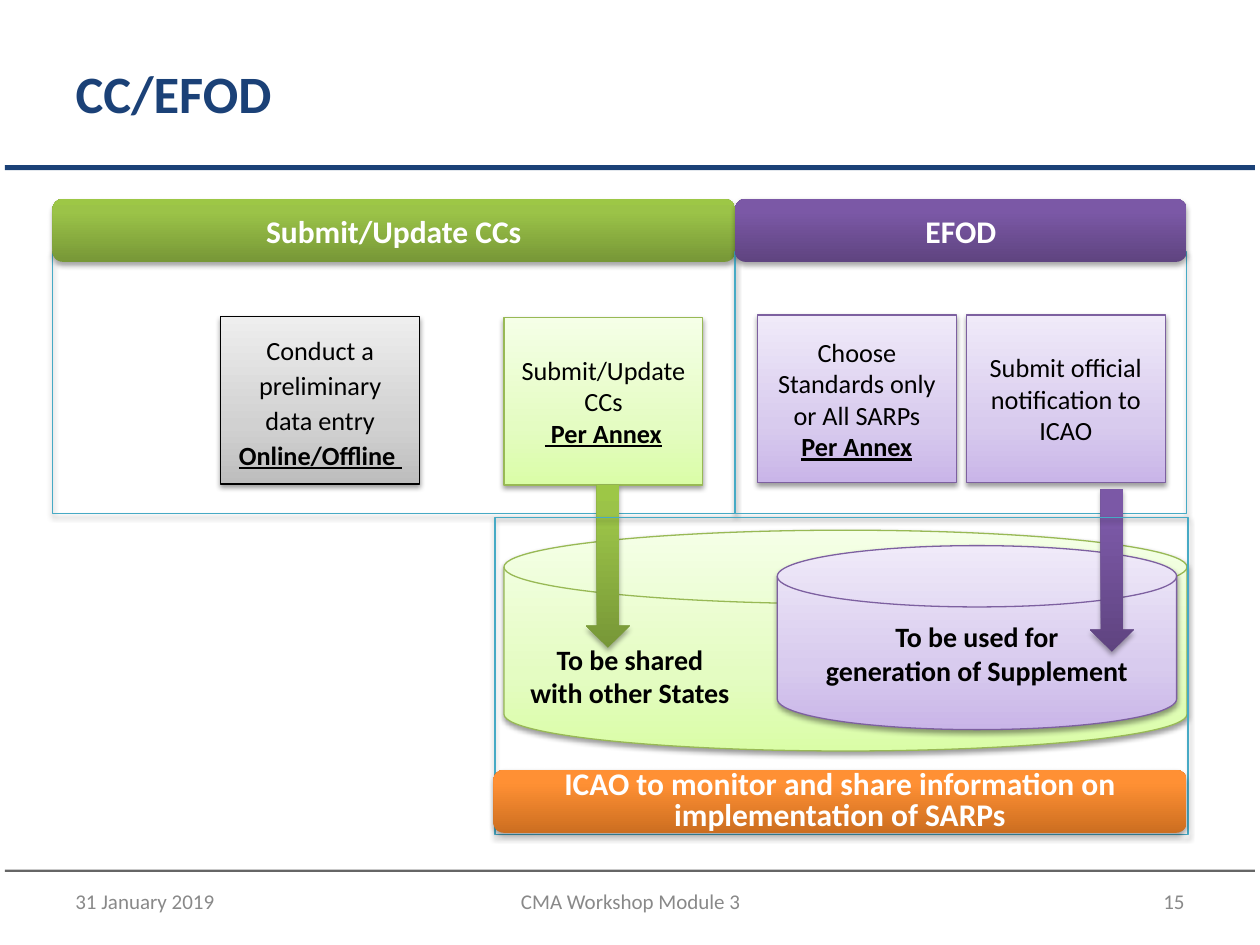
from copy import deepcopy
from dataclasses import dataclass

from lxml import etree
from pptx import Presentation
from pptx.dml.color import RGBColor
from pptx.enum import shapes, text
from pptx.oxml.ns import qn
from pptx.util import Cm, Pt

SHAPE = shapes.MSO_SHAPE
ALIGN = text.PP_ALIGN

COLOURS = {
    "navy": "1B4177", "rule": "666666", "footer": "898989",
    "black": "000000", "white": "FFFFFF", "panel": "46AAC5",
    "green line": "98B955", "purple line": "7D60A0",
}
# Gradient stops from bottom to top.
GRADIENTS = {
    "grey": ("BDBDBD", "D1D1D1", "EEEEEE"),
    "pale green": ("DAFDA7", "E4FCC2", "F5FFE7"),
    "pale purple": ("C9B5E8", "D8CBEE", "F0EAF9"),
    "green": ("779737", "9BC348", "9DC746"),
    "purple": ("5F4480", "7B58A6", "7C57A8"),
    "orange": ("CC6E20", "FF9034", "FF9136"),
}
STEP_SIZE = (4.01, 3.38)
ARROW_SIZE = (0.89, 3.28)
BAR_HEIGHT = 1.27


@dataclass
class Block:
    """A diagram part; lengths in cm, pale parts have a line and bars have none."""
    kind: SHAPE
    left: float
    top: float
    width: float
    height: float
    gradient: str = ""
    line: str = ""
    lines: tuple[str, ...] = ()
    emphasis: str = ""
    size: float = 15
    bold: bool = False
    colour: str = "black"
    spacing: float | None = None
    inset_top: float = 0.13
    inset_right: float = 0.25


@dataclass
class Footer:
    words: str
    left: float
    width: float
    align: ALIGN


def rgb(name: str) -> RGBColor:
    return RGBColor.from_string(COLOURS[name])


def write(frame, lines, *, size, colour, bold=False, align=ALIGN.CENTER,
          spacing=None, emphasis="") -> None:
    """Fill a frame; the emphasis is a last line in bold underline."""
    frame.word_wrap = True
    frame.vertical_anchor = text.MSO_ANCHOR.MIDDLE
    entries = [(words, False) for words in lines]
    if emphasis:
        entries.append((emphasis, True))
    for index, (words, strong) in enumerate(entries):
        paragraph = frame.add_paragraph() if index else frame.paragraphs[0]
        paragraph.alignment = align
        if spacing:
            paragraph.line_spacing = Pt(spacing)
        run = paragraph.add_run()
        run.text = words
        font = run.font
        font.name, font.size = "Calibri", Pt(size)
        font.bold = bold or strong
        font.underline = strong or None
        font.color.rgb = rgb(colour)


def fill_gradient(shape, name: str, middle: float) -> None:
    fill = shape.fill
    fill.gradient()
    fill.gradient_angle = 90
    stop_list = shape._element.spPr.find(".//" + qn("a:gsLst"))
    stop_list.append(deepcopy(stop_list[-1]))
    for stop, colour, position in zip(fill.gradient_stops, GRADIENTS[name], (0, middle, 1)):
        stop.color.rgb = RGBColor.from_string(colour)
        stop.position = position


def cast_shadow(shape, distance: float, opacity: int) -> None:
    shape.shadow.inherit = False
    effects = shape._element.spPr.find(qn("a:effectLst"))
    shadow = etree.SubElement(effects, qn("a:outerShdw"), blurRad=str(Pt(3.1)),
                              dist=str(Pt(distance)), dir="5400000", rotWithShape="0")
    black = etree.SubElement(shadow, qn("a:srgbClr"), val=COLOURS["black"])
    etree.SubElement(black, qn("a:alpha"), val=str(opacity * 1000))


def draw_block(slide, block: Block) -> None:
    shape = slide.shapes.add_shape(block.kind, Cm(block.left), Cm(block.top),
                                   Cm(block.width), Cm(block.height))
    if block.gradient:
        fill_gradient(shape, block.gradient, 0.35 if block.line else 0.8)
    else:
        shape.fill.background()
    if block.line:
        shape.line.color.rgb = rgb(block.line)
        shape.line.width = Pt(0.75)
        cast_shadow(shape, 1.6, 38)
    else:
        shape.line.fill.background()
        cast_shadow(shape, 1.8, 35)
    if block.lines:
        frame = shape.text_frame
        frame.margin_top, frame.margin_right = Cm(block.inset_top), Cm(block.inset_right)
        write(frame, block.lines, size=block.size, colour=block.colour, bold=block.bold,
              spacing=block.spacing, emphasis=block.emphasis)


def draw_rule(slide, top: float, height: float, colour: str) -> None:
    rule = slide.shapes.add_shape(SHAPE.RECTANGLE, Cm(0.1), Cm(top), Cm(25.2), Cm(height))
    rule.shadow.inherit = False
    rule.fill.solid()
    rule.fill.fore_color.rgb = rgb(colour)
    rule.line.fill.background()


def draw_footer(slide, footer: Footer) -> None:
    box = slide.shapes.add_textbox(Cm(footer.left), Cm(17.65), Cm(footer.width), Cm(1.02))
    write(box.text_frame, [footer.words], size=12, colour="footer", align=footer.align)


def step(left: float, top: float, gradient: str, line: str, words: str, **options) -> Block:
    return Block(SHAPE.RECTANGLE, left, top, *STEP_SIZE, gradient, line, (words,), **options)


def bar(left: float, top: float, width: float, gradient: str, words: str, **options) -> Block:
    return Block(SHAPE.ROUNDED_RECTANGLE, left, top, width, BAR_HEIGHT, gradient,
                 lines=(words,), size=18, bold=True, colour="white", **options)


def panel(left: float, top: float, width: float, height: float) -> Block:
    return Block(SHAPE.RECTANGLE, left, top, width, height, line="panel")


def arrow(left: float, top: float, gradient: str) -> Block:
    return Block(SHAPE.DOWN_ARROW, left, top, *ARROW_SIZE, gradient)


BLOCKS = [
    step(4.45, 6.38, "grey", "black", "Conduct a preliminary data entry",
         emphasis="Online/Offline ", spacing=20),
    step(10.16, 6.4, "pale green", "green line", "Submit/Update CCs", emphasis=" Per Annex"),
    Block(SHAPE.FLOWCHART_MAGNETIC_DISK, 10.16, 10.69, 13.77, 4.45, "pale green", "green line",
          ("To be shared", "with other States"), size=16, bold=True,
          inset_top=0.81, inset_right=8.94),
    panel(1.06, 5.08, 13.76, 5.28),
    bar(1.06, 4.01, 13.76, "green", "Submit/Update CCs"),
    panel(14.82, 5.08, 9.1, 5.28),
    bar(14.82, 4.01, 9.1, "purple", "EFOD"),
    step(15.27, 6.35, "pale purple", "purple line", "Choose Standards only or All SARPs",
         emphasis="Per Annex"),
    step(19.48, 6.35, "pale purple", "purple line", "Submit official notification to ICAO"),
    arrow(11.81, 9.78, "green"),
    Block(SHAPE.FLOWCHART_MAGNETIC_DISK, 15.67, 11, 8.05, 3.71, "pale purple", "purple line",
          ("To be used for", "generation of Supplement"), size=16, bold=True),
    arrow(21.97, 9.86, "purple"),
    panel(9.98, 10.44, 13.97, 6.38),
    bar(9.95, 15.52, 13.97, "orange",
        "ICAO to monitor and share information on implementation of SARPs", spacing=18),
]
FOOTERS = [
    Footer("CMA Workshop Module 3", 8.69, 8.05, ALIGN.CENTER),
    Footer("31 January 2019", 1.27, 5.92, ALIGN.LEFT),
    Footer("15", 18.21, 5.92, ALIGN.RIGHT),
]


def main() -> None:
    deck = Presentation()
    deck.slide_width, deck.slide_height = Cm(25.4), Cm(19.05)
    slide = deck.slides.add_slide(deck.slide_layouts[5])

    draw_rule(slide, 17.53, 0.05, "rule")
    draw_rule(slide, 3.33, 0.1, "navy")
    for block in BLOCKS:
        draw_block(slide, block)

    heading = slide.shapes.title
    heading.left, heading.top = Cm(1.27), Cm(0.28)
    heading.width, heading.height = Cm(22.86), Cm(3.18)
    write(heading.text_frame, ["CC/EFOD"], size=30, colour="navy", bold=True, align=ALIGN.LEFT)
    for footer in FOOTERS:
        draw_footer(slide, footer)

    deck.save("out.pptx")


if __name__ == "__main__":
    main()
